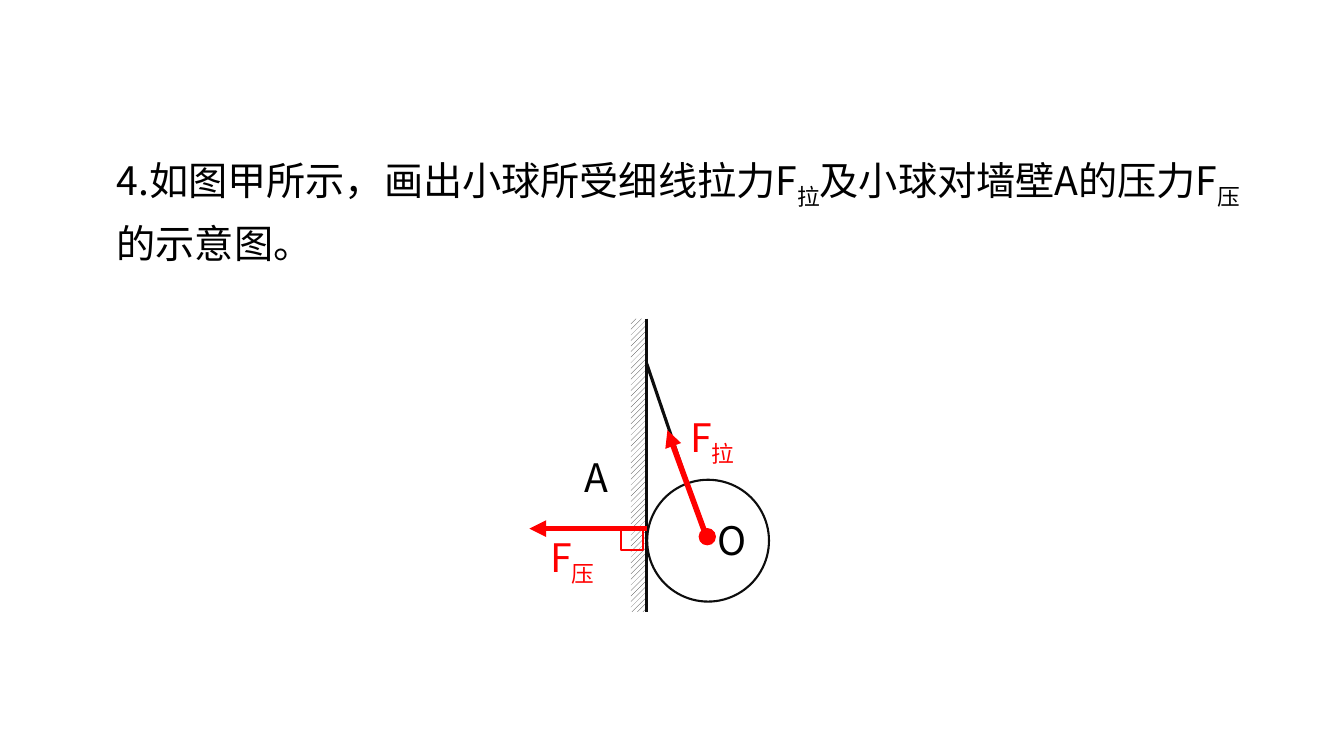
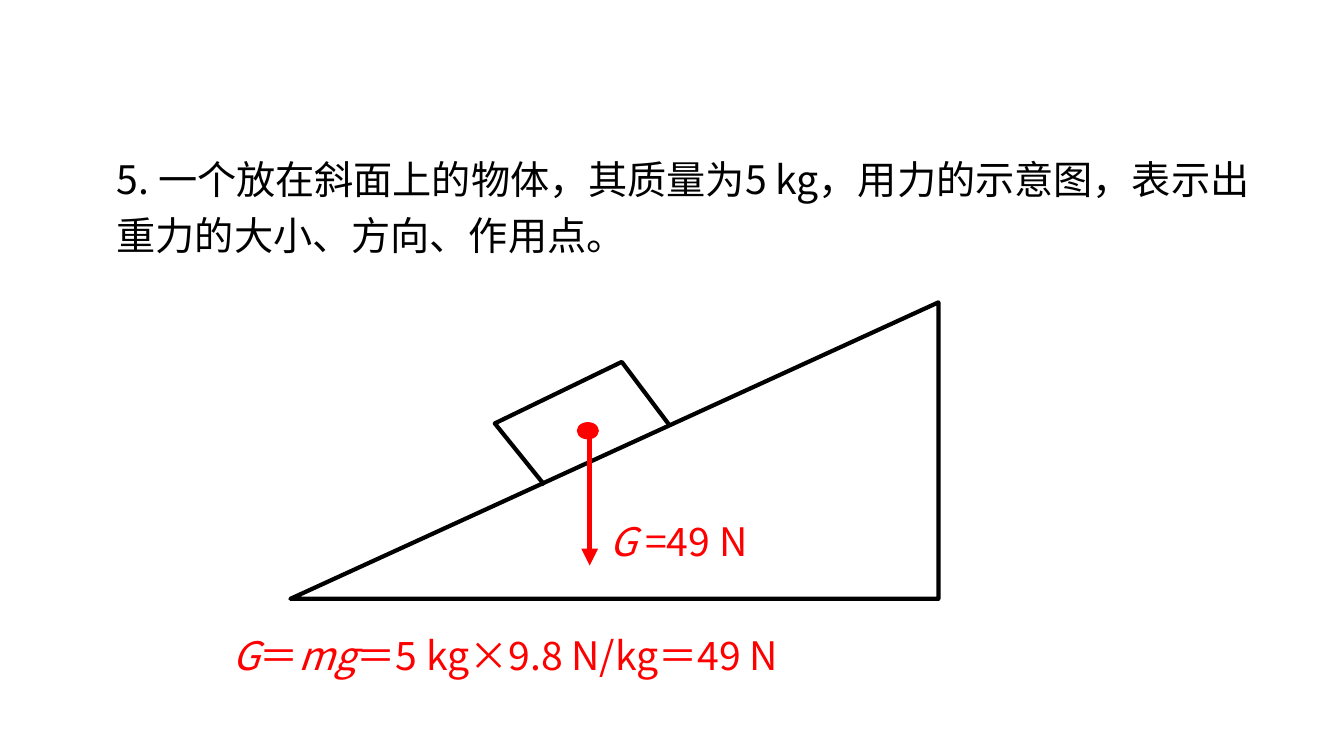
"""Build two physics exercise slides with force diagrams."""
from dataclasses import dataclass

from lxml import etree
from pptx import Presentation
from pptx.dml.color import RGBColor
from pptx.enum.dml import MSO_PATTERN
from pptx.enum.shapes import MSO_CONNECTOR, MSO_SHAPE
from pptx.enum.text import MSO_AUTO_SIZE
from pptx.oxml.ns import qn
from pptx.util import Cm, Pt

HATCH = MSO_PATTERN.WIDE_UPWARD_DIAGONAL
STRAIGHT = MSO_CONNECTOR.STRAIGHT
OVAL, RECTANGLE = MSO_SHAPE.OVAL, MSO_SHAPE.RECTANGLE
GROW = MSO_AUTO_SIZE.SHAPE_TO_FIT_TEXT
PLAIN, SUB, ITALIC = "plain", "sub", "italic"


@dataclass(frozen=True)
class Theme:
    font: str = "Noto Sans CJK SC"
    size: float = 28
    ink: RGBColor = RGBColor(0, 0, 0)
    outline: RGBColor = RGBColor(0x0D, 0x0D, 0x0D)
    hatch: RGBColor = RGBColor(0x26, 0x26, 0x26)
    paper: RGBColor = RGBColor(255, 255, 255)
    answer: RGBColor = RGBColor(255, 0, 0)
    hairline: float = 0.75
    thin: float = 1.5
    medium: float = 2.25
    thick: float = 3
    force: float = 4


THEME = Theme()
QUESTION_AREA = (2.69, 3.54, 29.41, 3.12)
LABEL_HEIGHT = 1.45
POINT_WIDTH = 1.19
FORCE_WIDTH = 2.11

BALL_QUESTION = [
    ("4.如图甲所示，画出小球所受细线拉力F", PLAIN), ("拉", SUB),
    ("及小球对墙壁A的压力F", PLAIN), ("压", SUB), ("的示意图。", PLAIN),
]
WALL = (15.9, 8.03, 0.39, 7.39)
BALL = (16.31, 12.09, 3.07, 3.07)
BALL_CENTRE = (17.62, 13.32, 0.41, 0.41)
RIGHT_ANGLE = (15.65, 13.34, 0.56, 0.53)
BALL_LINES = [((16.29, 8.03), (16.29, 15.42)), ((16.29, 9.14), (17.83, 13.67))]
BALL_FORCES = [((17.78, 13.46), (16.82, 10.84)), ((16.31, 13.32), (13.34, 13.32))]
BALL_NAMES = [("A", 14.48, 11.29), ("O", 17.83, 12.89)]
FORCE_NAMES = [("拉", 17.15, 10.29), ("压", 13.62, 13.31)]

SLOPE_QUESTION = [
    ("5. 一个放在斜面上的物体，其质量为5 kg，用力的示意图，表示出重力的大小、方向、作用点。", PLAIN),
]
FORMULA = [("G", ITALIC), ("＝", PLAIN), ("mg", ITALIC), ("＝5 kg×9.8 N/kg＝49 N", PLAIN)]
WEIGHT_NAME = [("G ", ITALIC), ("=49 N", PLAIN)]
SLOPE = [(7.32, 15.09), (23.65, 15.09), (23.65, 7.62), (7.32, 15.09)]
BLOCK = [(16.89, 10.74), (15.67, 9.12), (12.47, 10.67), (13.72, 12.22)]
BLOCK_CENTRE = (14.55, 10.65, 0.53, 0.41)
WEIGHT = ((14.86, 10.85), (14.86, 14.25))


def lengths(values):
    return [Cm(value) for value in values]


def add_text(shapes, area, spans, color=THEME.ink, spacing=None, wrap=True):
    box = shapes.add_textbox(*lengths(area))
    frame = box.text_frame
    frame.word_wrap = wrap
    frame.auto_size = GROW
    para = frame.paragraphs[0]
    para.line_spacing = spacing
    para.font.size = Pt(THEME.size)
    para.font.name = THEME.font
    para.font.color.rgb = color
    defaults = para._p.pPr.find(qn("a:defRPr"))
    etree.SubElement(defaults, qn("a:ea"), typeface=THEME.font)
    for text, style in spans:
        span = para.add_run()
        span.text = text
        if style == ITALIC:
            span.font.italic = True
        elif style == SUB:
            span._r.get_or_add_rPr().set("baseline", "-25000")


def paint_line(line, color, width):
    line.color.rgb = color
    line.width = Pt(width)


def add_outline(shapes, kind, area, color, width):
    shape = shapes.add_shape(kind, *lengths(area))
    shape.shadow.inherit = False
    shape.fill.background()
    paint_line(shape.line, color, width)
    return shape


def add_dot(shapes, area):
    dot = add_outline(shapes, OVAL, area, THEME.answer, THEME.hairline)
    dot.fill.solid()
    dot.fill.fore_color.rgb = THEME.answer


def add_line(shapes, ends, color, width):
    start, end = ends
    line = shapes.add_connector(STRAIGHT, *lengths(start + end))
    paint_line(line.line, color, width)
    etree.SubElement(line._element.spPr, qn("a:effectLst"))
    return line


def add_force(shapes, ends):
    arrow = add_line(shapes, ends, THEME.answer, THEME.force)
    etree.SubElement(arrow.line._get_or_add_ln(), qn("a:tailEnd"), type="triangle")


def add_outline_path(shapes, points):
    corners = [tuple(lengths(point)) for point in points]
    builder = shapes.build_freeform(*corners[0])
    builder.add_line_segments(corners[1:], close=corners[0] == corners[-1])
    shape = builder.convert_to_shape()
    shape.shadow.inherit = False
    shape.fill.background()
    paint_line(shape.line, THEME.ink, THEME.thick)
    etree.SubElement(shape.line._get_or_add_ln(), qn("a:round"))


def add_question(deck, spans):
    page = deck.slides.add_slide(deck.slide_layouts[6])
    add_text(page.shapes, QUESTION_AREA, spans, spacing=1.2)
    return page.shapes


def build_ball(deck):
    shapes = add_question(deck, BALL_QUESTION)
    figure = shapes.add_group_shape().shapes
    wall = add_outline(figure, RECTANGLE, WALL, THEME.hatch, THEME.hairline)
    wall.line.fill.background()
    wall.fill.patterned()
    wall.fill.pattern = HATCH
    wall.fill.fore_color.rgb = THEME.hatch
    wall.fill.back_color.rgb = THEME.paper
    for ends in BALL_LINES:
        add_line(figure, ends, THEME.outline, THEME.medium)
    add_outline(figure, OVAL, BALL, THEME.outline, THEME.thin)
    for name, left, top in BALL_NAMES:
        add_text(figure, (left, top, POINT_WIDTH, LABEL_HEIGHT), [(name, PLAIN)])

    answer = shapes.add_group_shape().shapes
    add_outline(answer, RECTANGLE, RIGHT_ANGLE, THEME.answer, THEME.thin)
    for ends in BALL_FORCES:
        add_force(answer, ends)
    add_dot(answer, BALL_CENTRE)
    for name, left, top in FORCE_NAMES:
        spans = [("F", PLAIN), (name, SUB)]
        add_text(answer, (left, top, FORCE_WIDTH, LABEL_HEIGHT), spans, THEME.answer)


def build_slope(deck):
    shapes = add_question(deck, SLOPE_QUESTION)
    add_text(shapes, (5.6, 15.78, 20.83, LABEL_HEIGHT), FORMULA, THEME.answer)
    for points in (SLOPE, BLOCK):
        add_outline_path(shapes, points)
    add_dot(shapes, BLOCK_CENTRE)
    answer = shapes.add_group_shape().shapes
    add_force(answer, WEIGHT)
    add_text(answer, (15.11, 12.9, 4.57, LABEL_HEIGHT), WEIGHT_NAME, THEME.answer, wrap=False)


def main():
    deck = Presentation()
    deck.slide_width, deck.slide_height = Cm(33.87), Cm(19.05)
    build_ball(deck)
    build_slope(deck)
    deck.save("out.pptx")


if __name__ == "__main__":
    main()
